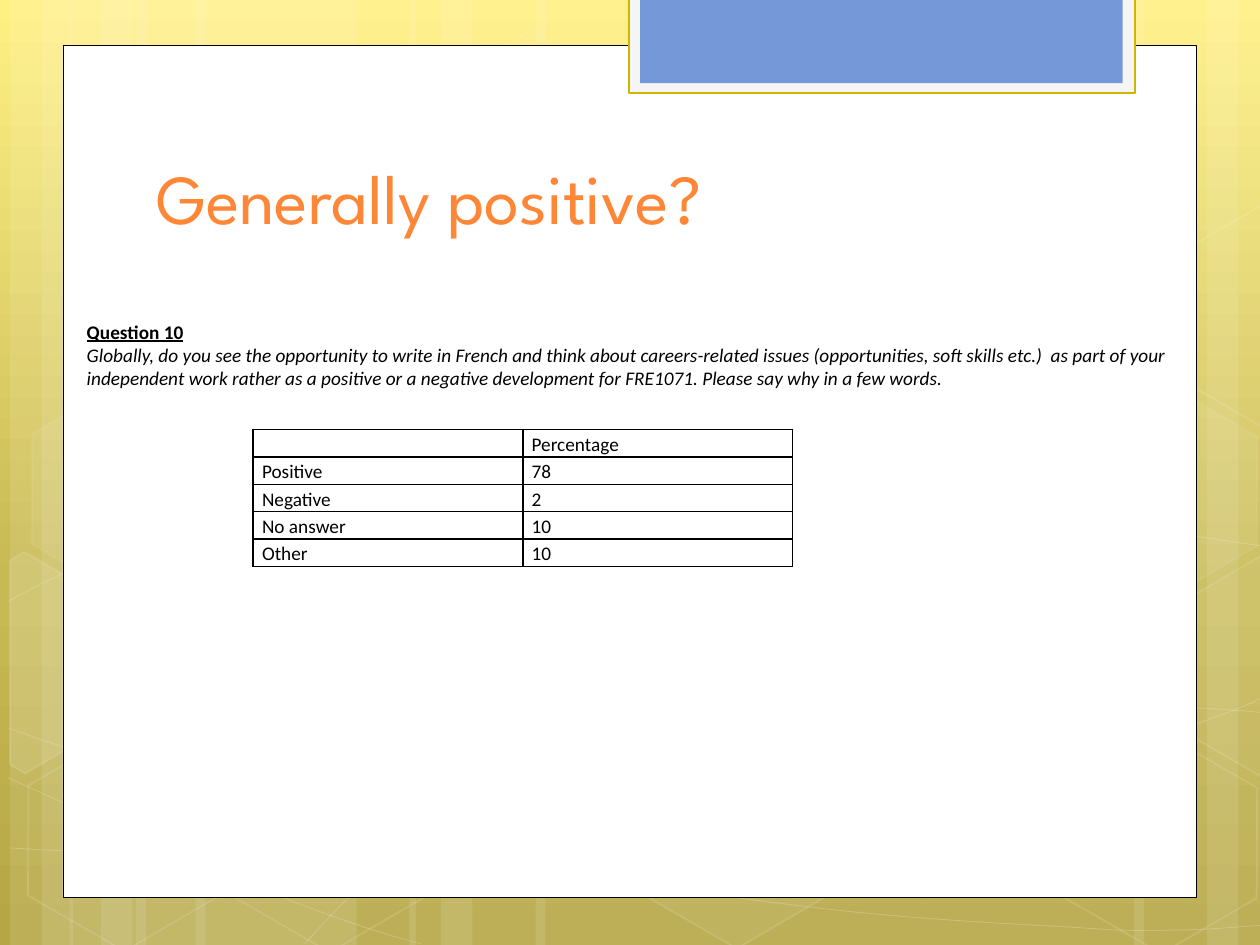
from copy import deepcopy
from dataclasses import dataclass
from lxml.etree import SubElement
from pptx import Presentation
from pptx.dml.color import RGBColor
from pptx.enum.shapes import MSO_SHAPE
from pptx.enum.text import MSO_ANCHOR, MSO_AUTO_SIZE, PP_ALIGN
from pptx.oxml.ns import qn
from pptx.util import Inches, Pt

COLUMNS, ROWS = 10, 7.5  # grid cells are one inch square


@dataclass(frozen=True)
class Theme:
    white: str = "FFFFFF"
    ink: str = "000000"
    title: str = "FE8637"
    tab: str = "7598D9"
    tab_rim: str = "F5F5F5"
    tab_line: str = "CEB500"
    backdrop: tuple = ((0, "FFF082"), (0.62, "C7B953"), (1, "B6A744"))
    title_font: str = "League Spartan"
    body_font: str = "Calibri"
    title_size: int = 40
    body_size: int = 11


@dataclass(frozen=True)
class Box:
    left: float
    top: float
    width: float
    height: float

    def lengths(self):
        return [Inches(n) for n in (self.left, self.top, self.width, self.height)]


THEME = Theme()

# Curves: a start point, then cubic segments of two handles and an end
CURVES = [
    [(0.07, 6.73), (0.61, 6.76), (1.15, 6.79), (1.9, 6.78), (2.65, 6.77), (3.58, 6.75), (4.58, 6.65),
     (5.58, 6.55), (7, 6.36), (7.92, 6.17), (8.83, 5.98), (9.77, 5.68), (10.07, 5.51)],
    [(0.07, 4.77), (0.36, 4.61), (0.65, 4.46), (1.21, 4.31), (1.78, 4.16), (2.59, 3.94), (3.47, 3.87),
     (4.36, 3.8), (5.44, 3.79), (6.54, 3.87), (7.64, 3.95), (9.47, 4.26), (10.07, 4.34)],
    [(0.06, 6.17), (1.27, 6.72), (2.47, 7.27), (3.34, 7.49)],
    [(0.07, 5.78), (0.38, 5.89), (0.7, 6), (1.28, 6.16), (1.86, 6.31), (2.73, 6.56), (3.57, 6.73),
     (4.4, 6.9), (5.45, 7.08), (6.28, 7.18), (7.11, 7.29), (8, 7.33), (8.53, 7.36),
     (9.05, 7.4), (9.19, 7.38), (9.45, 7.38), (9.71, 7.37), (9.89, 7.35), (10.07, 7.34)],
    [(2.42, 7.49), (2.6, 7.29), (2.78, 7.09), (3.02, 6.91), (3.26, 6.73), (3.6, 6.53), (3.88, 6.39),
     (4.16, 6.25), (4.33, 6.19), (4.7, 6.09), (5.06, 5.99), (5.73, 5.85), (6.08, 5.78),
     (6.44, 5.71), (6.49, 5.71), (6.8, 5.69), (7.11, 5.66), (7.6, 5.63), (7.94, 5.62),
     (8.29, 5.61), (8.86, 5.62), (8.86, 5.62), (9.08, 5.62), (9.31, 5.62), (9.53, 5.62),
     (9.71, 5.63), (9.88, 5.64), (10.06, 5.66)],
]
# Hexagons: left, top, fill opacity, line opacity (percent)
HEXAGONS = [(3.34, 0.36, 4, 8), (4.97, 5.89, 6, 12), (0.11, 5.91, 0, 12), (0.14, 3.12, 7, 8),
            (1.74, 5.92, 0, 12), (8.34, 5.93, 0, 12), (8.34, 3.14, 7, 8)]
# Hexagons cut by the slide edge: fill opacity, corners
CUT_HEXAGONS = [
    (10, [(0.08, 4.45), (0.19, 4.38), (0.96, 4.82), (0.95, 5.7), (0.2, 6.14), (0.08, 6.07)]),
    (4, [(9.26, 4.85), (10.01, 4.41), (10.09, 4.46), (10.09, 6.13), (10.02, 6.17), (9.26, 5.73)]),
    (0, [(9.26, 2.07), (10.01, 1.63), (10.1, 1.68), (10.09, 3.35), (10.02, 3.39), (9.26, 2.95)]),
]


def paint(fill, color, opacity=100):
    if not opacity:
        fill.background()
        return
    fill.solid()
    fill.fore_color.rgb = RGBColor.from_string(color)
    if opacity < 100:
        tint = fill._xPr.find(".//" + qn("a:srgbClr"))
        SubElement(tint, qn("a:alpha"), val=str(opacity * 1000))


def dress(shape, fill=THEME.white, fill_opacity=100, line=THEME.white, line_opacity=0, weight=1):
    shape.shadow.inherit = False
    paint(shape.fill, fill, fill_opacity)
    paint(shape.line.fill, line, line_opacity)
    if line_opacity:
        shape.line.width = Pt(weight)


def write(para, text, size=THEME.body_size, font=THEME.body_font, color=THEME.ink):
    span = para.add_run()
    span.text = text
    span.font.size = Pt(size)
    span.font.name = font
    span.font.color.rgb = RGBColor.from_string(color)
    return span


def outline(page, points, close):
    start, *rest = [(Inches(x), Inches(y)) for x, y in points]
    builder = page.shapes.build_freeform(*start)
    builder.add_line_segments(rest, close=close)
    return builder.convert_to_shape()


def bend(shape):
    """Turn each three straight segments into one cubic curve."""
    segments = list(shape.element.iter(qn("a:lnTo")))
    for first in range(0, len(segments), 3):
        curve = SubElement(segments[first].getparent(), qn("a:cubicBezTo"))
        for segment in segments[first:first + 3]:
            curve.append(segment[0])
            segment.getparent().remove(segment)
    return shape


def add_backdrop(page):
    fill = page.background.fill
    fill.gradient()
    fill.gradient_angle = 270
    stops = page.element.find(".//" + qn("a:gsLst"))
    stops.append(deepcopy(stops[-1]))
    for stop, (position, color) in zip(page.background.fill.gradient_stops, THEME.backdrop):
        stop.position = position
        stop.color.rgb = RGBColor.from_string(color)


def add_bars(page, box):
    # Each cluster has a wide, a narrow and a middle bar
    for start, wide, mirrored in ((0.08, 1.75, False), (0.55, 1.75, False),
                                  (-0.08, 1.75, True), (3.25, 3.08, False)):
        for offset, width in ((1, wide), (0, 0.5), (0.25, 0.83)):
            left = start + offset
            if mirrored:
                left = box.width - left - width
            bar = Box(box.left + left, box.top, width, box.height)
            dress(page.shapes.add_shape(MSO_SHAPE.RECTANGLE, *bar.lengths()), fill_opacity=10)


def add_lattice(page):
    for points in CURVES:
        dress(bend(outline(page, points, False)), fill_opacity=0, line_opacity=20, weight=0.5)
    for left, top, fill_opacity, line_opacity in HEXAGONS:
        hexagon = page.shapes.add_shape(MSO_SHAPE.HEXAGON, *Box(left, top, 1.75, 1.52).lengths())
        hexagon.adjustments[0] = 0.285
        hexagon.rotation = 30
        dress(hexagon, fill_opacity=fill_opacity, line_opacity=line_opacity)
    for fill_opacity, corners in CUT_HEXAGONS:
        dress(outline(page, corners, True), fill_opacity=fill_opacity, line_opacity=12)


def add_panel(page, box):
    # White sheet, then the tab hanging from the top edge
    tab_left, tab_top = box.left + 4.49, box.top - 0.38
    for part, style in (
        (box, dict(line=THEME.ink, line_opacity=100, weight=0.5)),
        (Box(tab_left, tab_top, 4.02, 0.76),
         dict(fill=THEME.tab_rim, line=THEME.tab_line, line_opacity=100, weight=1.25)),
        (Box(tab_left + 0.09, tab_top, 3.83, 0.68), dict(fill=THEME.tab)),
    ):
        dress(page.shapes.add_shape(MSO_SHAPE.RECTANGLE, *part.lengths()), **style)


def add_title(page, box, text):
    title = page.shapes.title
    title.left, title.top, title.width, title.height = box.lengths()
    title.element.getparent().append(title.element)  # bring to front
    frame = title.text_frame
    frame.auto_size = MSO_AUTO_SIZE.NONE
    frame.vertical_anchor = MSO_ANCHOR.BOTTOM
    frame.paragraphs[0].alignment = PP_ALIGN.LEFT
    write(frame.paragraphs[0], text, THEME.title_size, THEME.title_font, THEME.title)


def add_border(cell):
    properties = cell._tc.get_or_add_tcPr()
    for position, side in enumerate(("a:lnL", "a:lnR", "a:lnT", "a:lnB")):
        line = SubElement(properties, qn(side), w=str(Pt(1)))
        SubElement(SubElement(line, qn("a:solidFill")), qn("a:srgbClr"), val=THEME.ink)
        properties.insert(position, line)


def add_answers(page, box, rows):
    table = page.shapes.add_table(len(rows), len(rows[0]), *box.lengths()).table
    for row, texts in zip(table.rows, rows):
        row.height = Inches(box.height / len(rows))
        for cell, text in zip(row.cells, texts):
            cell.margin_left = cell.margin_right = Inches(0.07)
            cell.margin_top = cell.margin_bottom = 0
            cell.fill.background()
            add_border(cell)
            para = cell.text_frame.paragraphs[0]
            para.line_spacing = 1.15
            if text:
                write(para, text)
            else:
                SubElement(para._p, qn("a:endParaRPr"), sz=str(THEME.body_size * 100))


def add_question(page, box, heading, question):
    frame = page.shapes.add_textbox(*box.lengths()).text_frame
    frame.word_wrap = True
    span = write(frame.paragraphs[0], heading)
    span.font.bold = span.font.underline = True
    write(frame.add_paragraph(), question).font.italic = True


def main():
    deck = Presentation()
    deck.slide_width, deck.slide_height = Inches(COLUMNS), Inches(ROWS)
    page = deck.slides.add_slide(deck.slide_layouts[5])
    add_backdrop(page)
    add_bars(page, Box(0, 0, COLUMNS, ROWS))
    add_lattice(page)
    add_panel(page, Box(0.5, 0.36, 9, 6.76))
    add_title(page, Box(1.14, 1.13, 7.68, 0.81), "Generally positive?")
    add_answers(page, Box(2.01, 3.41, 4.28, 1.05), [
        ("", "Percentage"), ("Positive", "78"), ("Negative", "2"), ("No answer", "10"), ("Other", "10")])
    add_question(page, Box(0.59, 2.49, 8.9, 0.96), "Question 10",
                 "Globally, do you see the opportunity to write in French and think about careers-related "
                 "issues (opportunities, soft skills etc.)  as part of your independent work rather as a "
                 "positive or a negative development for FRE1071. Please say why in a few words.")
    deck.save("out.pptx")


if __name__ == "__main__":
    main()
